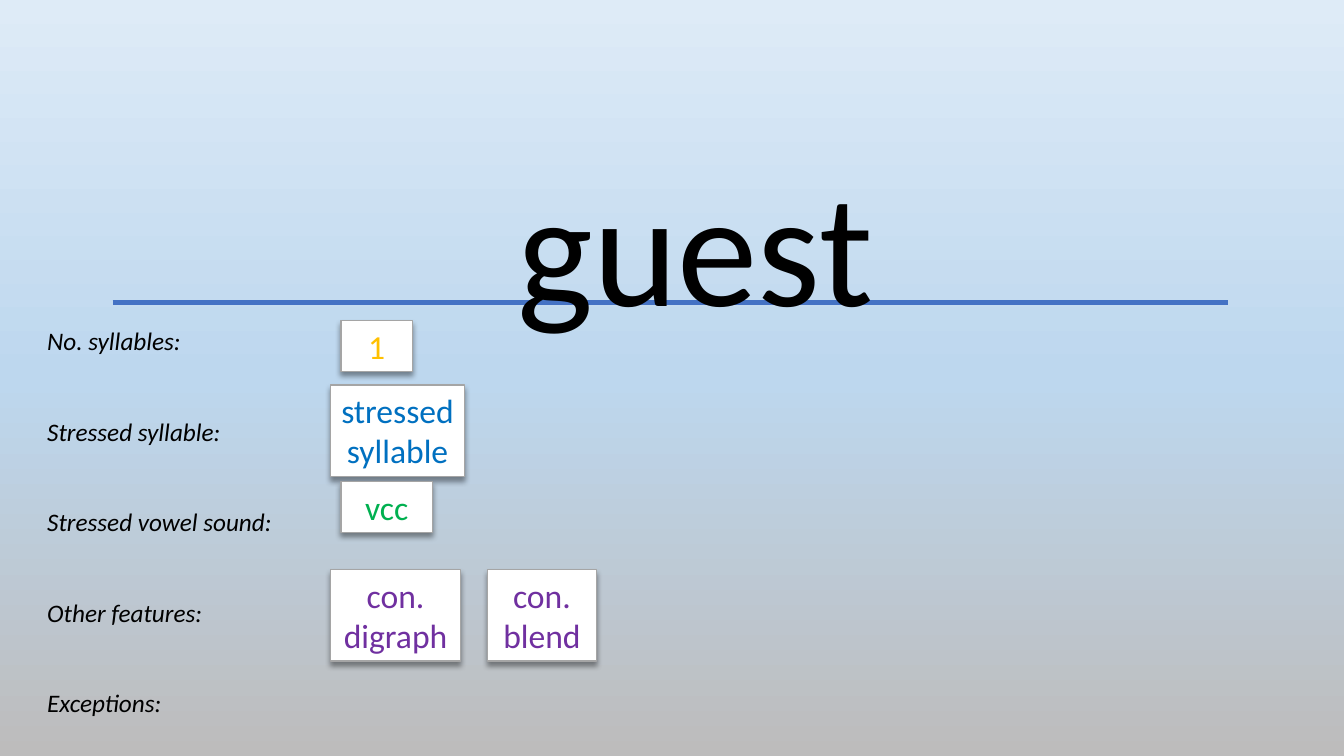
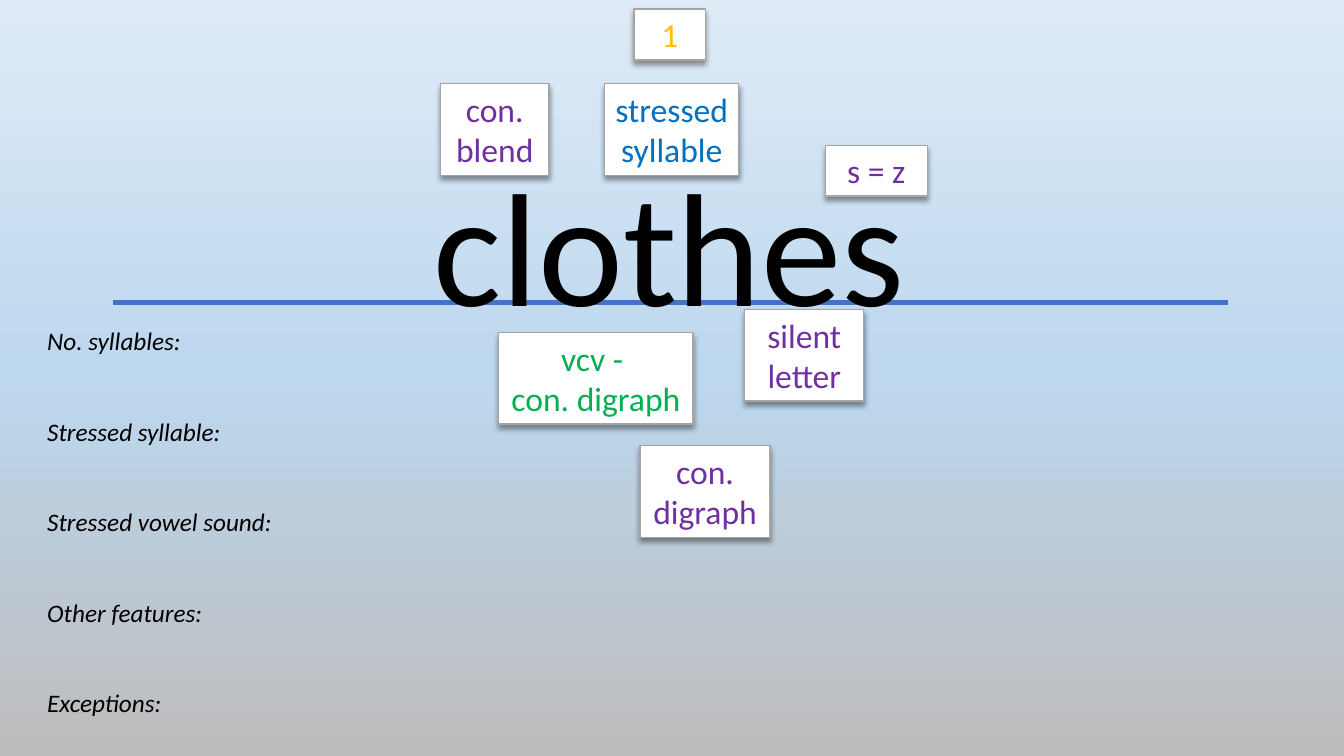
import copy

import lxml.etree
import pptx
import pptx.dml.color
import pptx.enum.shapes
import pptx.enum.text
import pptx.oxml.ns
import pptx.util

Cm = pptx.util.Cm
Pt = pptx.util.Pt
RGBColor = pptx.dml.color.RGBColor
qn = pptx.oxml.ns.qn

FONT = "Calibri"
BLACK = RGBColor(0x00, 0x00, 0x00)
WHITE = RGBColor(0xFF, 0xFF, 0xFF)
GREY = RGBColor(0xA5, 0xA5, 0xA5)
LINE_BLUE = RGBColor(0x44, 0x72, 0xC4)
GOLD = RGBColor(0xFF, 0xC0, 0x00)
BLUE = RGBColor(0x00, 0x70, 0xC0)
GREEN = RGBColor(0x00, 0xB0, 0x50)
PURPLE = RGBColor(0x70, 0x30, 0xA0)
SKY_TOP = RGBColor(0xDE, 0xEB, 0xF7)
SKY_MIDDLE = RGBColor(0xBD, 0xD7, 0xEE)
SKY_BOTTOM = RGBColor(0xBD, 0xBC, 0xBC)

SHORT, TALL = 1.28, 2.31
LABELS = ["No. syllables:", "Stressed syllable:", "Stressed vowel sound:",
          "Other features:", "Exceptions:"]
CARDS = {
    "1": (1.8, SHORT, GOLD),
    "stressed\nsyllable": (3.38, TALL, BLUE),
    "vcc": (2.31, SHORT, GREEN),
    "vcv - \ncon. digraph": (4.9, TALL, GREEN),
    "con. digraph": (3.28, TALL, PURPLE),
    "con. blend": (2.74, TALL, PURPLE),
    "silent\nletter": (3.0, TALL, PURPLE),
    "s = z": (2.57, SHORT, PURPLE),
}
WORDS = [
    ("guest", 5.03, [
        ("stressed\nsyllable", 8.33, 9.7),
        ("1", 8.59, 8.08),
        ("con. digraph", 8.33, 14.35),
        ("vcc", 8.59, 12.14),
        ("con. blend", 12.29, 14.35),
    ]),
    ("clothes", 4.37, [
        ("stressed\nsyllable", 15.24, 2.11),
        ("1", 15.98, 0.23),
        ("vcv - \ncon. digraph", 12.57, 8.38),
        ("con. digraph", 16.13, 11.23),
        ("silent\nletter", 18.77, 7.8),
        ("s = z", 20.8, 3.66),
        ("con. blend", 11.1, 2.11),
    ]),
]


def write(shape, text, size, color, align, italic=False, gap=0):
    frame = shape.text_frame
    frame.text = text
    frame.word_wrap = True
    frame.auto_size = pptx.enum.text.MSO_AUTO_SIZE.SHAPE_TO_FIT_TEXT
    frame.vertical_anchor = pptx.enum.text.MSO_ANCHOR.TOP
    for index, para in enumerate(frame.paragraphs):
        para.alignment = align
        para.space_before = Pt(gap if index else 0)
        para.font.name = FONT
        para.font.size = Pt(size)
        para.font.italic = italic
        para.font.color.rgb = color


def add_card(page, text, left, top):
    width, height, color = CARDS[text]
    card = page.shapes.add_shape(pptx.enum.shapes.MSO_SHAPE.RECTANGLE,
                                 Cm(left), Cm(top), Cm(width), Cm(height))
    card.fill.solid()
    card.fill.fore_color.rgb = WHITE
    card.line.color.rgb = GREY
    card.line.width = Pt(1)
    card.shadow.inherit = False
    effects = card.element.spPr.find(qn("a:effectLst"))
    shadow = lxml.etree.SubElement(
        effects, qn("a:outerShdw"), blurRad=str(Pt(4)), dist=str(Pt(3)),
        dir="5400000", algn="t", rotWithShape="0")
    tint = lxml.etree.SubElement(shadow, qn("a:srgbClr"), val=str(BLACK))
    lxml.etree.SubElement(tint, qn("a:alpha"), val="40000")
    write(card, text, 24, color, CENTER)


CENTER = pptx.enum.text.PP_ALIGN.CENTER
LEFT = pptx.enum.text.PP_ALIGN.LEFT

deck = pptx.Presentation()
deck.slide_width = Cm(33.87)
deck.slide_height = Cm(19.05)

master = deck.slide_master
sky = master.background.fill
sky.gradient()
sky.gradient_angle = 270
stop_list = master.element.find(".//" + qn("a:gsLst"))
stop_list.append(copy.deepcopy(stop_list[0]))
for stop, position, color in zip(sky.gradient_stops, (0, 0.5, 1),
                                 (SKY_TOP, SKY_MIDDLE, SKY_BOTTOM)):
    stop.position = position
    stop.color.rgb = color

for word, word_left, cards in WORDS:
    page = deck.slides.add_slide(deck.slide_layouts[5])

    baseline = page.shapes.add_connector(
        pptx.enum.shapes.MSO_CONNECTOR.STRAIGHT,
        Cm(2.84), Cm(7.62), Cm(30.94), Cm(7.62))
    baseline.line.color.rgb = LINE_BLUE
    baseline.line.width = Pt(3)
    lxml.etree.SubElement(baseline.element.spPr, qn("a:effectLst"))

    title = page.shapes.title
    title.left, title.top = Cm(word_left), Cm(3.53)
    title.width, title.height = Cm(24.99), Cm(5.18)
    write(title, word, 115, BLACK, CENTER)
    baseline.element.addnext(title.element)

    labels = page.shapes.add_textbox(Cm(0.94), Cm(8.08), Cm(6.22), Cm(10.26))
    write(labels, "\n".join(LABELS), 18, BLACK, LEFT, italic=True, gap=43)

    for text, left, top in cards:
        add_card(page, text, left, top)

deck.save("out.pptx")
